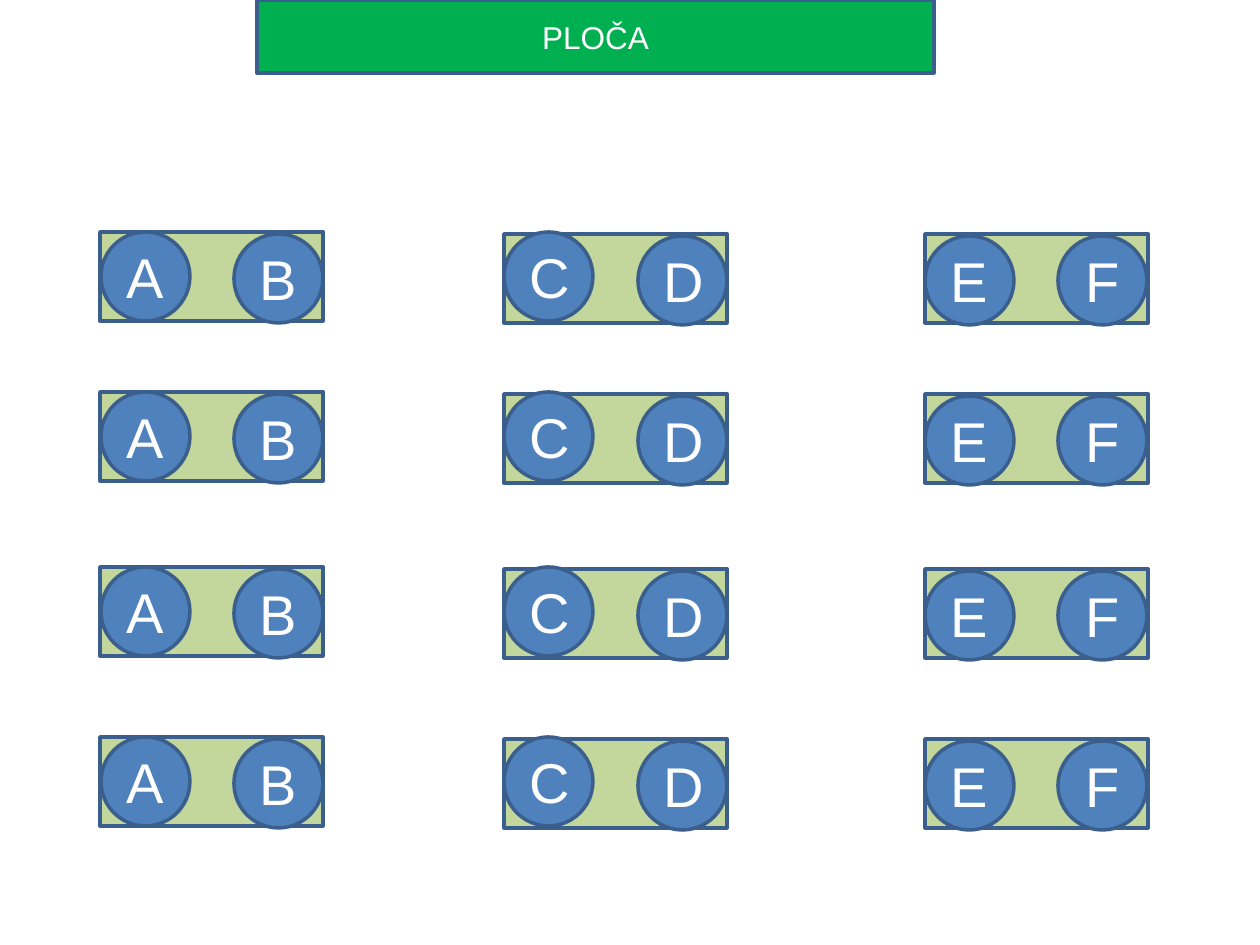
from pptx import Presentation
from pptx.dml.color import RGBColor
from pptx.enum.shapes import MSO_SHAPE as Shape
from pptx.enum.text import MSO_ANCHOR as Anchor, PP_ALIGN as Align
from pptx.util import Emu, Pt

PX_PER_INCH = 126
ROW_TOPS = (232, 392, 567, 737)
DESKS = ((100, 0), (504, 2), (925, 2))
SEATS = (("A", 101, 0), ("B", 234, 2), ("C", 504, 0),
         ("D", 638, 4), ("E", 925, 4), ("F", 1058, 4))
DESK_WIDTH, SEAT_SIZE = 223, 89


def px(length):
    """Turn pixels into EMU."""
    return Emu(round(length * 914400 / PX_PER_INCH))


def color(hex_code):
    """Turn a hex string into a colour."""
    return RGBColor.from_string(hex_code)


def add_block(slide, kind, box, fill):
    """Add a filled, outlined preset shape."""
    block = slide.shapes.add_shape(kind, *map(px, box))
    block.shadow.inherit = False
    block.fill.solid()
    block.fill.fore_color.rgb = color(fill)
    block.line.color.rgb = color("3A5F8C")
    block.line.width = Pt(2)
    return block


def add_label(block, text, size):
    """Write centred white text in a shape."""
    block.text_frame.vertical_anchor = Anchor.MIDDLE
    paragraph = block.text_frame.paragraphs[0]
    paragraph.text = text
    paragraph.alignment = Align.CENTER
    paragraph.font.name = "Arial"
    paragraph.font.size = Pt(size)
    paragraph.font.color.rgb = color("FFFFFF")


def add_row(slide, top):
    """Add one row of desks with their lettered seats."""
    for left, drop in DESKS:
        add_block(slide, Shape.RECTANGLE, (left, top + drop, DESK_WIDTH, SEAT_SIZE), "C3D69B")
    for letter, left, drop in SEATS:
        seat = add_block(slide, Shape.OVAL, (left, top + drop, SEAT_SIZE, SEAT_SIZE), "4F81BD")
        add_label(seat, letter, 32)


def main():
    """Build the classroom seating plan."""
    deck = Presentation()
    deck.slide_width, deck.slide_height = px(1260), px(945)
    slide = deck.slides.add_slide(deck.slide_layouts[6])
    for top in ROW_TOPS:
        add_row(slide, top)
    board = add_block(slide, Shape.RECTANGLE, (257, 0, 677, 73), "00B050")
    add_label(board, "PLOČA", 18)
    deck.save("out.pptx")


if __name__ == "__main__":
    main()
